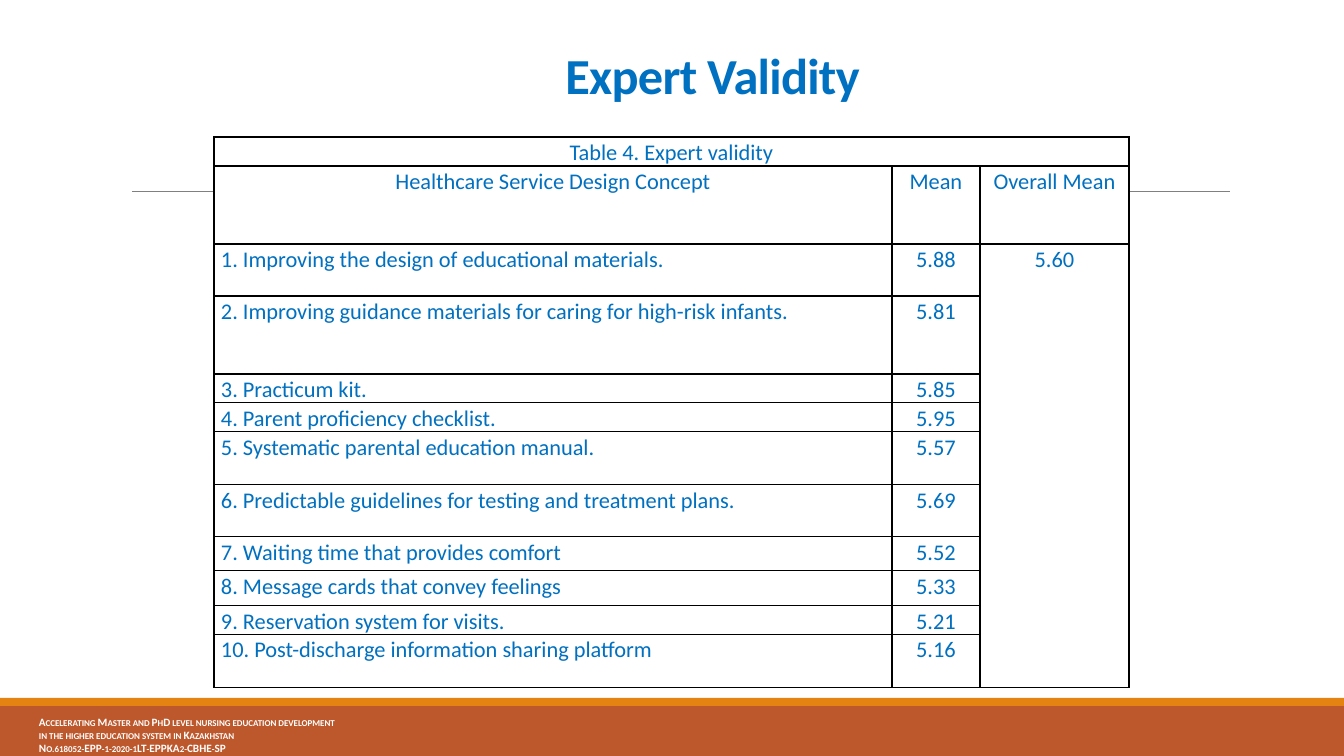
"""Build the Expert Validity slide: a table of mean scores above a project footer."""
import pptx
import pptx.dml.color
import pptx.enum.shapes
import pptx.enum.text
import pptx.oxml.ns
import pptx.util
from lxml import etree

PX = 12192000 / 1344
BLUE = "0070C0"
ALIGN = pptx.enum.text.PP_ALIGN


def px(*lengths):
    return [pptx.util.Emu(round(length * PX)) for length in lengths]


def paint(color_format, value):
    color_format.rgb = pptx.dml.color.RGBColor.from_string(value)


deck = pptx.Presentation()
deck.slide_width, deck.slide_height = px(1344, 756)
slide = deck.slides.add_slide(deck.slide_layouts[5])

for top, height, color in [(706, 50, "BD582C"), (698, 8, "E48312")]:
    band = slide.shapes.add_shape(
        pptx.enum.shapes.MSO_SHAPE.RECTANGLE, *px(0, top, 1344, height))
    band.shadow.inherit = False
    band.fill.solid()
    paint(band.fill.fore_color, color)
    band.line.fill.background()

rule = slide.shapes.add_connector(
    pptx.enum.shapes.MSO_CONNECTOR.STRAIGHT, *px(132, 191, 1230, 191))
paint(rule.line.color, "808080")
rule.line.width = pptx.util.Pt(0.5)
etree.SubElement(rule._element.spPr, pptx.oxml.ns.qn("a:effectLst"))

project = slide.shapes.add_textbox(*px(29, 696, 463, 60)).text_frame
project.word_wrap = True
project.margin_top = px(19)[0]
project.text = (
    "Accelerating Master and PhD level nursing education development\n"
    "in the higher education system in Kazakhstan\n"
    "No.618052-EPP-1-2020-1LT-EPPKA2-CBHE-SP")
for paragraph in project.paragraphs:
    paragraph.font.name = "Calibri"
    paragraph.font.size = pptx.util.Pt(8)
    paragraph.font.bold = True
    paint(paragraph.font.color, "FFFFFF")
    paragraph.font._rPr.set("cap", "small")

title = slide.shapes.title
title.left, title.top, title.width, title.height = px(91, 40, 1243, 70)
title.text_frame.text = "Expert Validity"
title.text_frame.auto_size = pptx.enum.text.MSO_AUTO_SIZE.NONE
title.text_frame.vertical_anchor = pptx.enum.text.MSO_ANCHOR.BOTTOM
heading = title.text_frame.paragraphs[0]
heading.alignment = ALIGN.CENTER
heading.line_spacing = 0.85
heading.font.name = "Calibri"
heading.font.size = pptx.util.Pt(36)
heading.font.bold = True
paint(heading.font.color, BLUE)
heading.font._rPr.set("spc", "-50")

rows = [
    ("Table 4. Expert validity", "", ""),
    ("Healthcare Service Design Concept", "Mean", "Overall Mean"),
    ("1. Improving the design of educational materials.", "5.88", "5.60"),
    ("2. Improving guidance materials for caring for high-risk infants.", "5.81", ""),
    ("3. Practicum kit.", "5.85", ""),
    ("4. Parent proficiency checklist.", "5.95", ""),
    ("5. Systematic parental education manual.", "5.57", ""),
    ("6. Predictable guidelines for testing and treatment plans.", "5.69", ""),
    ("7. Waiting time that provides comfort", "5.52", ""),
    ("8. Message cards that convey feelings", "5.33", ""),
    ("9. Reservation system for visits.", "5.21", ""),
    ("10. Post-discharge information sharing platform", "5.16", ""),
]
row_heights = [29, 78, 52, 78, 29, 29, 53, 52, 34, 35, 29, 53]
column_widths = [678, 88, 149]

scores = slide.shapes.add_table(
    len(rows), len(column_widths),
    *px(214, 137, sum(column_widths), sum(row_heights))).table
for column, width in zip(scores.columns, px(*column_widths)):
    column.width = width
for row, height in zip(scores.rows, px(*row_heights)):
    row.height = height

for r, texts in enumerate(rows):
    for c, text in enumerate(texts):
        cell = scores.cell(r, c)
        cell.margin_left, cell.margin_right, cell.margin_top, cell.margin_bottom = px(7, 7, 0, 0)
        cell.text = text
        paragraph = cell.text_frame.paragraphs[0]
        paragraph.alignment = ALIGN.LEFT if c == 0 and r > 1 else ALIGN.CENTER
        paragraph.line_spacing = 1.07
        paragraph.font.name = "Calibri"
        paragraph.font.size = pptx.util.Pt(16)
        paint(paragraph.font.color, BLUE)
        for side in ("lnL", "lnR", "lnT", "lnB"):
            border = etree.SubElement(
                cell._tc.get_or_add_tcPr(), pptx.oxml.ns.qn(f"a:{side}"), w="12700")
            stroke = etree.SubElement(border, pptx.oxml.ns.qn("a:solidFill"))
            etree.SubElement(stroke, pptx.oxml.ns.qn("a:srgbClr"), val="000000")
        cell.fill.solid()
        paint(cell.fill.fore_color, "FFFFFF")

scores.cell(0, 0).merge(scores.cell(0, 2))
scores.cell(2, 2).merge(scores.cell(len(rows) - 1, 2))

deck.save("out.pptx")
